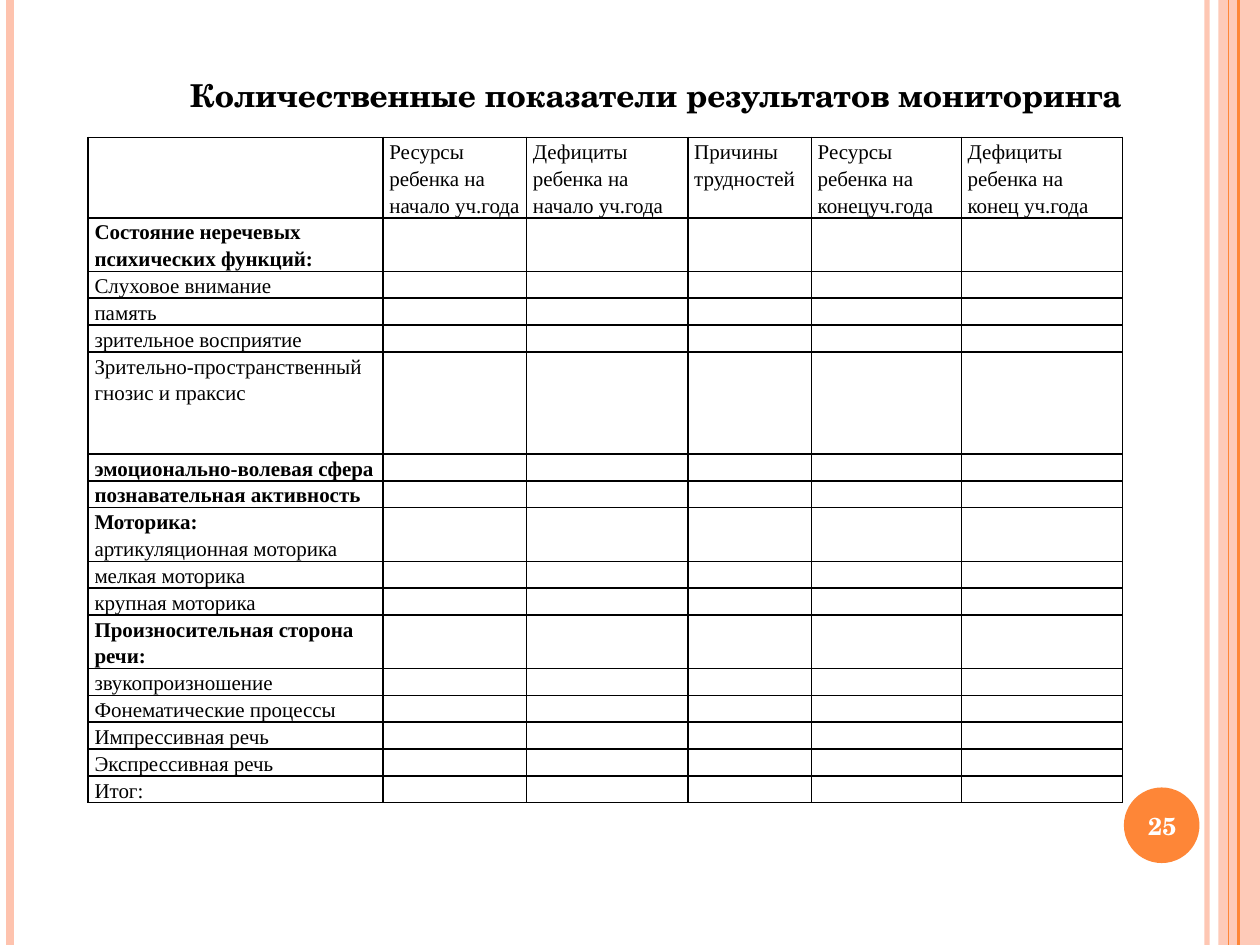
from dataclasses import dataclass

import pptx
import pptx.dml.color
import pptx.enum.shapes
import pptx.enum.text
import pptx.oxml.ns
import pptx.util
from lxml import etree

Inches = pptx.util.Inches
Pt = pptx.util.Pt
Align = pptx.enum.text.PP_ALIGN
Anchor = pptx.enum.text.MSO_ANCHOR
Shape = pptx.enum.shapes.MSO_SHAPE
qn = pptx.oxml.ns.qn

PEACH, ORANGE, BLACK, WHITE = "FEC3AE", "FE8637", "000000", "FFFFFF"
SERIF, SCHOOL = "Times New Roman", "TeX Gyre Schola"
CELL = {"margin_left": Inches(0.05), "margin_right": Inches(0.05),
        "margin_top": 0, "margin_bottom": 0}


@dataclass
class Stripe:
    x: float
    width: float
    color: str
    alpha: int = 100


@dataclass
class Line:
    text: str
    bold: bool = False


@dataclass
class Row:
    height: float
    lines: list[Line]


STRIPES = [
    Stripe(9.58, 3, PEACH, 93),
    Stripe(0.08, 4.5, PEACH),
    Stripe(9.83, 1.5, ORANGE),
    Stripe(9.75, 0.75, ORANGE),
]
WIDTHS = [2.34, 1.14, 1.28, 0.98, 1.19, 1.28]
HEADS = [
    "",
    "Ресурсы ребенка на начало уч.года",
    "Дефициты ребенка на начало уч.года",
    "Причины трудностей",
    "Ресурсы ребенка на конецуч.года",
    "Дефициты ребенка на конец уч.года",
]
ROWS = [
    Row(0.36, [Line("Состояние неречевых психических функций:", True)]),
    Row(0.18, [Line("Слуховое внимание")]),
    Row(0.18, [Line("память")]),
    Row(0.18, [Line("зрительное восприятие")]),
    Row(0.81, [Line("Зрительно-пространственный гнозис и праксис")]),
    Row(0.18, [Line("эмоционально-волевая сфера", True)]),
    Row(0.18, [Line("познавательная активность", True)]),
    Row(0.36, [Line("Моторика:", True), Line("артикуляционная моторика")]),
    Row(0.18, [Line("мелкая моторика")]),
    Row(0.18, [Line("крупная моторика")]),
    Row(0.36, [Line("Произносительная сторона речи:", True)]),
    Row(0.18, [Line("звукопроизношение")]),
    Row(0.18, [Line("Фонематические процессы")]),
    Row(0.18, [Line("Импрессивная речь")]),
    Row(0.18, [Line("Экспрессивная речь")]),
    Row(0.18, [Line("Итог:")]),
]


def style(item, form: dict) -> None:
    for name, value in form.items():
        setattr(item, name, value)


def paint(color, code: str) -> None:
    color.rgb = pptx.dml.color.RGBColor.from_string(code)


def fade(fill, alpha: int) -> None:
    if alpha < 100:
        code = next(fill.iter(qn("a:srgbClr")))
        etree.SubElement(code, qn("a:alpha"), val=str(alpha * 1000))


def write(para, text: str, code: str, form: dict) -> None:
    run = para.add_run()
    run.text = text
    style(run.font, form)
    paint(run.font.color, code)


def draw_stripe(slide, stripe: Stripe) -> None:
    x = Inches(stripe.x)
    line = slide.shapes.add_connector(
        pptx.enum.shapes.MSO_CONNECTOR.STRAIGHT, x, 0, x, Inches(7.5))
    line.line.width = Pt(stripe.width)
    paint(line.line.color, stripe.color)
    fade(line._element.spPr, stripe.alpha)
    etree.SubElement(line._element.spPr, qn("a:effectLst"))


def draw_shape(slide, kind, box: tuple, code: str, alpha: int = 100) -> None:
    shape = slide.shapes.add_shape(kind, *map(Inches, box))
    shape.shadow.inherit = False
    shape.fill.solid()
    paint(shape.fill.fore_color, code)
    fade(shape._element.spPr, alpha)
    shape.line.fill.background()


def draw_cell(cell, lines: list[Line]) -> None:
    style(cell, CELL)
    props = cell._tc.get_or_add_tcPr()
    for side in ("L", "R", "T", "B"):
        edge = etree.SubElement(props, qn("a:ln" + side), w=str(Pt(1)))
        fill = etree.SubElement(edge, qn("a:solidFill"))
        etree.SubElement(fill, qn("a:srgbClr"), val=BLACK)
    cell.fill.background()
    frame = cell.text_frame
    for i, line in enumerate(lines):
        para = frame.add_paragraph() if i else frame.paragraphs[0]
        para.line_spacing = Pt(15.3)
        if line.text:
            write(para, line.text, BLACK,
                  {"size": Pt(12), "name": SERIF, "bold": line.bold})
        else:
            end = etree.SubElement(para._p, qn("a:endParaRPr"), sz="1200")
            etree.SubElement(end, qn("a:latin"), typeface=SERIF)


def draw_table(slide) -> None:
    heights = [0.54] + [row.height for row in ROWS]
    frame = slide.shapes.add_table(
        len(heights), len(WIDTHS), Inches(0.7), Inches(1.09),
        Inches(sum(WIDTHS)), Inches(sum(heights)))
    table = frame.table
    style(table, {"first_row": False, "horz_banding": False})
    for col, width in zip(table.columns, WIDTHS):
        col.width = Inches(width)
    for row, height in zip(table.rows, heights):
        row.height = Inches(height)
    blank = [[Line("")]] * (len(WIDTHS) - 1)
    grid = [[[Line(head)] for head in HEADS]]
    grid += [[row.lines] + blank for row in ROWS]
    for r, cells in enumerate(grid):
        for c, lines in enumerate(cells):
            draw_cell(table.cell(r, c), lines)


def fill_text(shape, box: tuple, text: str, code: str, size: int,
              align, form: dict) -> None:
    sides = ("left", "top", "width", "height")
    style(shape, dict(zip(sides, map(Inches, box))))
    style(shape.text_frame, form)
    para = shape.text_frame.paragraphs[0]
    para.alignment = align
    write(para, text, code, {"size": Pt(size), "name": SCHOOL, "bold": True})


def main() -> None:
    deck = pptx.Presentation()
    style(deck, {"slide_width": Inches(10), "slide_height": Inches(7.5)})
    slide = deck.slides.add_slide(deck.slide_layouts[5])
    side, rim, *edges = STRIPES
    draw_stripe(slide, side)
    draw_stripe(slide, rim)
    draw_shape(slide, Shape.RECTANGLE, (9.67, 0, 0.33, 7.5), PEACH, 87)
    for edge in edges:
        draw_stripe(slide, edge)
    draw_shape(slide, Shape.OVAL, (8.92, 6.25, 0.6, 0.6), ORANGE)
    badge = slide.shapes.add_textbox(0, 0, 0, 0)
    fill_text(badge, (8.89, 6.27, 0.67, 0.57), "25", WHITE, 14, Align.CENTER,
              {"word_wrap": True, "vertical_anchor": Anchor.MIDDLE})
    draw_table(slide)
    fill_text(slide.shapes.title, (1.41, 0.55, 7.67, 0.4),
              "Количественные показатели результатов мониторинга",
              BLACK, 18, Align.LEFT,
              {"word_wrap": False, "vertical_anchor": Anchor.TOP,
               "auto_size": pptx.enum.text.MSO_AUTO_SIZE.SHAPE_TO_FIT_TEXT})
    deck.save("out.pptx")


if __name__ == "__main__":
    main()
